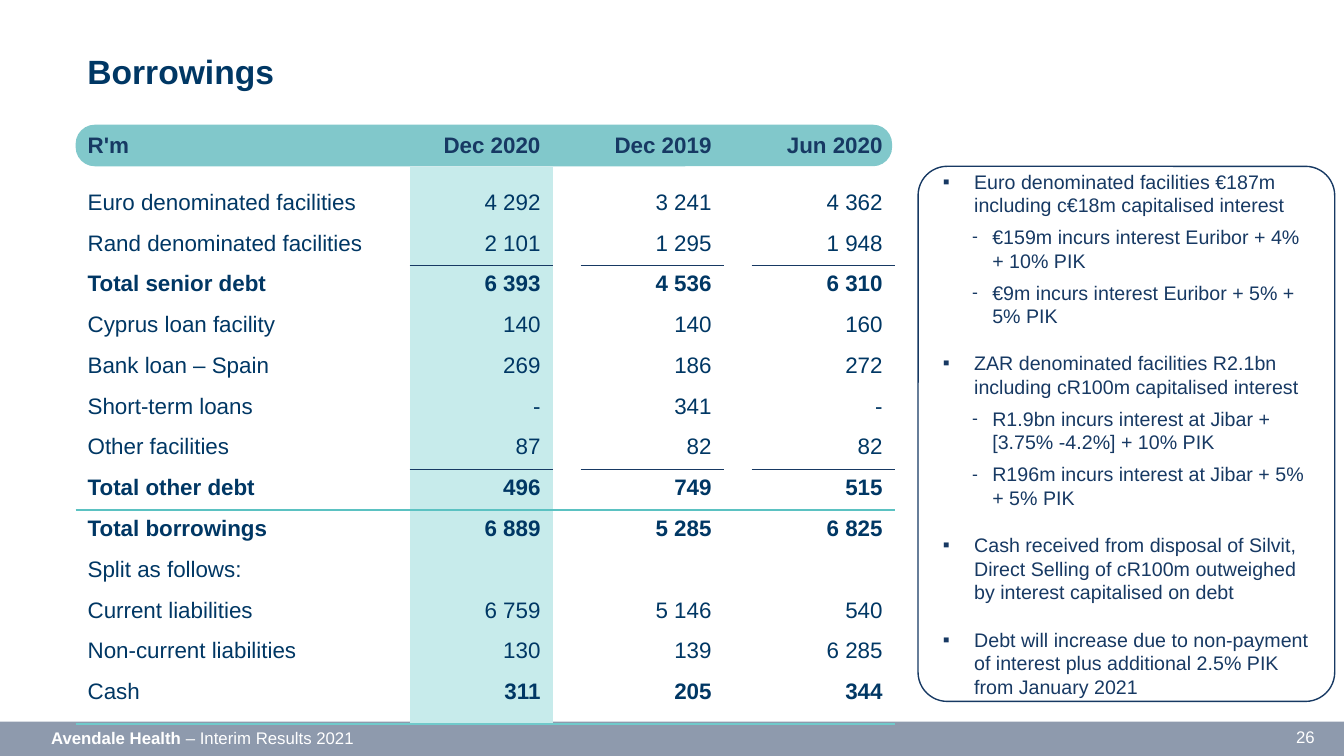
"""Build the Borrowings slide: a debt table beside a panel of notes."""
from lxml import etree
from pptx import Presentation, util as u
from pptx.dml.color import RGBColor
from pptx.enum import shapes, text
from pptx.oxml import ns

COLORS = {"navy": "003764", "ink": "173963", "teal": "81C8CB", "pale": "C7EBEB",
          "rule": "5BC2C2", "base": "70CACB", "bar": "8E9AAD", "white": "FFFFFF"}
LEFT, RIGHT = text.PP_ALIGN.LEFT, text.PP_ALIGN.RIGHT
TOP, MIDDLE, BOTTOM = (text.MSO_ANCHOR.TOP, text.MSO_ANCHOR.MIDDLE,
                       text.MSO_ANCHOR.BOTTOM)
COLS, ROWS = 160, 90
NO_STYLE = "{2D5ABB26-0587-4C30-8999-92F81FD0307C}"

HEADER = ["R'm", "Dec 2020", "Dec 2019", "Jun 2020"]
DEBT = [
    ["Euro denominated facilities", "4 292", "3 241", "4 362"],
    ["Rand denominated facilities", "2 101", "1 295", "1 948"],
    ["Total senior debt", "6 393", "4 536", "6 310"],
    ["Cyprus loan facility", "140", "140", "160"],
    ["Bank loan – Spain", "269", "186", "272"],
    ["Short-term loans", "-", "341", "-"],
    ["Other facilities", "87", "82", "82"],
    ["Total other debt", "496", "749", "515"],
    ["Total borrowings", "6 889", "5 285", "6 825"],
    ["Split as follows:", "", "", ""],
    ["Current liabilities", "6 759", "5 146", "540"],
    ["Non-current liabilities", "130", "139", "6 285"],
    ["Cash", "311", "205", "344"],
]
NOTES = [
    (0, "Euro denominated facilities €187m including c€18m capitalised interest"),
    (1, "€159m incurs interest Euribor + 4% + 10% PIK"),
    (1, "€9m incurs interest Euribor + 5% + 5% PIK"),
    (0, "ZAR denominated facilities R2.1bn including cR100m capitalised interest"),
    (1, "R1.9bn incurs interest at Jibar + [3.75% -4.2%] + 10% PIK"),
    (1, "R196m incurs interest at Jibar + 5% + 5% PIK"),
    (0, "Cash received from disposal of Silvit, Direct Selling of cR100m "
        "outweighed by interest capitalised on debt"),
    (0, "Debt will increase due to non-payment of interest plus additional "
        "2.5% PIK from January 2021"),
]
BULLETS = [{"indent": 0.31, "hang": 0.31, "size": 100, "char": "▪", "before": 17},
           {"indent": 0.49, "hang": 0.2, "size": 90, "char": "-", "before": 6}]


def rgb(color):
    return RGBColor.from_string(COLORS[color])


def apply(obj, **values):
    for name, value in values.items():
        setattr(obj, name, value)


class Deck:
    def __init__(self):
        self.prs = Presentation()
        apply(self.prs, slide_width=u.Inches(13.33), slide_height=u.Inches(7.5))
        self.s = self.prs.slides.add_slide(self.prs.slide_layouts[1])

    def x(self, cols):
        return round(self.prs.slide_width * cols / COLS)

    def y(self, rows):
        return round(self.prs.slide_height * rows / ROWS)

    def box(self, left, top, width, height):
        return self.x(left), self.y(top), self.x(width), self.y(height)

    def place(self, sp, *at):
        apply(sp, **dict(zip(("left", "top", "width", "height"), self.box(*at))))

    def run(self, p, words, size, color, bold=False):
        r = p.add_run()
        r.text = words
        apply(r.font, name="Arial", size=u.Pt(size), bold=bold)
        r.font.color.rgb = rgb(color)

    def frame(self, tf, anchor, inset=0):
        apply(tf, word_wrap=True, auto_size=text.MSO_AUTO_SIZE.NONE,
              vertical_anchor=anchor, margin_left=u.Inches(inset),
              margin_right=u.Inches(inset), margin_top=u.Inches(inset / 2),
              margin_bottom=u.Inches(inset / 2))

    def shape(self, kind, at, fill, line=None, corner=None):
        sp = self.s.shapes.add_shape(kind, *self.box(*at))
        sp.shadow.inherit = False
        sp.fill.solid()
        sp.fill.fore_color.rgb = rgb(fill)
        if line:
            sp.line.color.rgb = rgb(line)
            sp.line.width = u.Pt(1)
        else:
            sp.line.fill.background()
        if corner:
            sp.adjustments[0] = corner

    def label(self, at, runs, align=LEFT):
        tf = self.s.shapes.add_textbox(*self.box(*at)).text_frame
        self.frame(tf, TOP, 0.1)
        p = tf.paragraphs[0]
        p.alignment = align
        for words, bold in runs:
            self.run(p, words, 12, "white", bold)

    def title(self, at, words):
        sp = self.s.shapes.title
        self.place(sp, *at)
        self.frame(sp.text_frame, BOTTOM)
        p = sp.text_frame.paragraphs[0]
        p.alignment = LEFT
        self.run(p, words, 24, "navy", True)

    def notes(self, at, items):
        sp = self.s.placeholders[1]
        self.place(sp, *at)
        sp.element.getparent().append(sp.element)
        tf = sp.text_frame
        self.frame(tf, MIDDLE)
        for i, (level, words) in enumerate(items):
            p = tf.paragraphs[0] if i == 0 else tf.add_paragraph()
            style = BULLETS[level]
            apply(p, level=level, alignment=LEFT, line_spacing=1.0,
                  space_before=u.Pt(style["before"] if i else 0), space_after=u.Pt(0))
            pPr = p._p.get_or_add_pPr()
            pPr.set("marL", str(u.Inches(style["indent"])))
            pPr.set("indent", str(-u.Inches(style["hang"])))
            color = etree.SubElement(pPr, ns.qn("a:buClr"))
            etree.SubElement(color, ns.qn("a:srgbClr"), val=COLORS["ink"])
            etree.SubElement(pPr, ns.qn("a:buSzPct"), val=str(style["size"] * 1000))
            etree.SubElement(pPr, ns.qn("a:buFont"), typeface="Arial")
            etree.SubElement(pPr, ns.qn("a:buChar"), char=style["char"])
            self.run(p, words, 14, "ink")

    def table(self, left, top, widths, heights):
        at = self.box(left, top, sum(widths), sum(heights))
        tbl = self.s.shapes.add_table(len(heights), len(widths), *at).table
        apply(tbl, first_row=False, horz_banding=False)
        tbl._tbl.tblPr.find(ns.qn("a:tableStyleId")).text = NO_STYLE
        for column, width in zip(tbl.columns, widths):
            column.width = self.x(width)
        for row, height in zip(tbl.rows, heights):
            row.height = self.y(height)
        return tbl

    def cell(self, c, words, align, color, bold, spacing, fill):
        pad = 0.08 if words else 0
        apply(c, vertical_anchor=MIDDLE, margin_left=u.Inches(0.12),
              margin_right=u.Inches(0.12), margin_top=u.Inches(pad),
              margin_bottom=u.Inches(pad))
        tcPr = c._tc.get_or_add_tcPr()
        for tag in ("a:lnL", "a:lnR", "a:lnT", "a:lnB"):
            etree.SubElement(etree.SubElement(tcPr, ns.qn(tag)), ns.qn("a:noFill"))
        if fill:
            c.fill.solid()
            c.fill.fore_color.rgb = rgb(fill)
        else:
            c.fill.background()
        p = c.text_frame.paragraphs[0]
        apply(p, alignment=align, line_spacing=spacing)
        if words:
            self.run(p, words, 16, color, bold)
        else:
            etree.SubElement(p._p, ns.qn("a:endParaRPr"), sz="100")

    def rule(self, tbl, row, cols, color, points):
        edges = [(row, "a:lnB")]
        if row + 1 < len(tbl.rows):
            edges.append((row + 1, "a:lnT"))
        for col in cols:
            for r, tag in edges:
                ln = tbl.cell(r, col)._tc.tcPr.find(ns.qn(tag))
                ln.remove(ln[0])
                ln.set("w", str(u.Pt(points)))
                fill = etree.SubElement(ln, ns.qn("a:solidFill"))
                etree.SubElement(fill, ns.qn("a:srgbClr"), val=COLORS[color])


def debt_table(deck):
    rows = [HEADER, [""] * 4, *DEBT, [""] * 4]
    heights = [4.8, 2.04] + [4.86] * len(DEBT) + [1.2]
    tbl = deck.table(9, 15.05, [39.76, 17.02, 3.33, 17.02, 3.33, 17.02], heights)
    for i, values in enumerate(rows):
        head, total = i == 0, values[0].startswith("Total")
        for j in range(6):
            words = "" if j in (2, 4) else values[(j + 1) // 2]
            bold = head or total or (values[0] == "Cash" and j > 0)
            deck.cell(tbl.cell(i, j), words, RIGHT if j else LEFT,
                      "ink" if head else "navy", bold, 0.9 if head else 0.8,
                      "pale" if j == 1 and not head else None)
    for row in (3, 8):
        deck.rule(tbl, row, (1, 3, 5), "ink", 0.75)
    deck.rule(tbl, 9, range(6), "rule", 1.5)
    deck.rule(tbl, len(rows) - 1, range(6), "base", 1.5)


def main():
    deck = Deck()
    kind = shapes.MSO_SHAPE
    deck.shape(kind.RECTANGLE, (0, 85.9, COLS, 4.1), "bar")
    deck.label((114.1, 85.9, 43.6, 3.6), [("26", False)], RIGHT)
    deck.label((4.9, 86.1, 71, 3.6),
               [("Avendale Health", True), (" – Interim Results 2021", False)])
    deck.shape(kind.ROUNDED_RECTANGLE, (9, 14.85, 97.2, 4.95), "teal", corner=0.46)
    deck.title((10.4, 4.8, 90.4, 6.1), "Borrowings")
    debt_table(deck)
    deck.shape(kind.ROUNDED_RECTANGLE, (109.3, 19.8, 49.6, 63.7), "white", "ink", 0.07)
    deck.notes((112.25, 19.8, 43.7, 63.7), NOTES)
    deck.prs.save("out.pptx")


if __name__ == "__main__":
    main()
